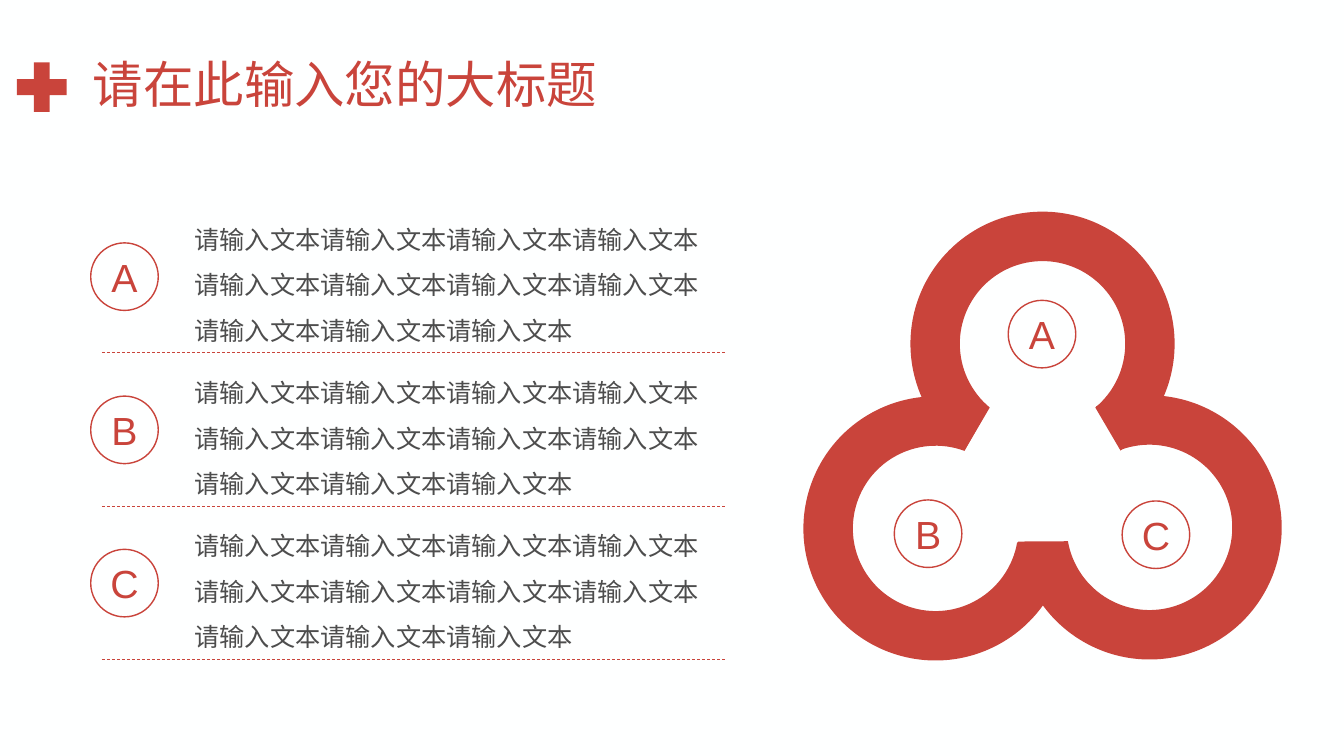
from dataclasses import dataclass
from math import cos, radians, sin, tan

from lxml.etree import SubElement
from pptx import Presentation
from pptx.dml.color import RGBColor
from pptx.enum.dml import MSO_LINE_DASH_STYLE as Dash
from pptx.enum.shapes import MSO_CONNECTOR, MSO_SHAPE
from pptx.enum.text import MSO_ANCHOR, PP_ALIGN
from pptx.oxml.ns import qn
from pptx.util import Inches, Pt


@dataclass(frozen=True)
class Theme:
    accent: RGBColor = RGBColor(0xC9, 0x44, 0x3B)
    body: RGBColor = RGBColor(0x4D, 0x4D, 0x4D)
    background: RGBColor = RGBColor(0xFE, 0xFF, 0xFF)
    latin_font: str = "Arial"
    chinese_font: str = "Noto Sans CJK SC"
    title_size: Pt = Pt(36)
    badge_size: Pt = Pt(28)
    body_size: Pt = Pt(18)


THEME = Theme()
TITLE = "请在此输入您的大标题"
BODY = "请输入文本" * 11
SLIDE_SIZE = (13.33, 7.5)
ROW_PITCH = 1.52
BADGE_SIZE = 0.67
ARM_SIZE = (2.62, 2.37)
OUTER_ARC = (1.31, [126.2, 180, 270, 360, 413.8])
INNER_ARC = (0.82, [410.3, 360, 270, 180, 129.7])
BADGES = [("A", 10, 2.98), ("B", 8.87, 4.96), ("C", 11.13, 4.97)]
ARMS = [(7.86, 4.12, 240), (10.2, 4.11, 120), (9.03, 2.1, 0)]


def write_text(shape, text, size, color, font, alignment, spacing):
    frame = shape.text_frame
    frame.word_wrap = True
    frame.vertical_anchor = MSO_ANCHOR.MIDDLE
    paragraph = frame.paragraphs[0]
    paragraph.alignment = alignment
    paragraph.line_spacing = spacing
    run = paragraph.add_run()
    run.text = text
    run.font.size = size
    run.font.color.rgb = color
    run.font.name = font
    SubElement(run.font._element, qn("a:ea")).set("typeface", font)


def fill_plain(shape, color):
    shape.shadow.inherit = False
    shape.fill.solid()
    shape.fill.fore_color.rgb = color
    shape.line.fill.background()


def add_filled_shape(slide, kind, color, left, top, width, height):
    shape = slide.shapes.add_shape(
        kind, Inches(left), Inches(top), Inches(width), Inches(height))
    fill_plain(shape, color)


def add_title(slide):
    title = slide.shapes.title
    title._element.getparent().append(title._element)
    title.left, title.top = Inches(0.82), Inches(0.4)
    title.width, title.height = Inches(11.68), Inches(0.93)
    write_text(title, TITLE, THEME.title_size, THEME.accent,
               THEME.chinese_font, PP_ALIGN.LEFT, 0.9)


def add_badge(slide, letter, left, top):
    badge = slide.shapes.add_shape(
        MSO_SHAPE.OVAL, Inches(left), Inches(top), Inches(BADGE_SIZE), Inches(BADGE_SIZE))
    badge.shadow.inherit = False
    badge.fill.background()
    badge.line.color.rgb = THEME.accent
    badge.line.width = Pt(1)
    frame = badge.text_frame
    frame.margin_left = frame.margin_right = 0
    frame.margin_top = frame.margin_bottom = 0
    write_text(badge, letter, THEME.badge_size, THEME.accent,
               THEME.latin_font, PP_ALIGN.CENTER, 1.0)


def arc_point(radius, angle, tangent=0.0):
    center = ARM_SIZE[0] / 2
    turn = radians(angle)
    return (Inches(center + radius * (cos(turn) - tangent * sin(turn))),
            Inches(center + radius * (sin(turn) + tangent * cos(turn))))


def arc_controls(radius, angles):
    for start, end in zip(angles, angles[1:]):
        reach = 4 / 3 * tan(radians(end - start) / 4)
        yield arc_point(radius, start, reach), arc_point(radius, end, -reach)


def bend_segment(segment, controls):
    segment.tag = qn("a:cubicBezTo")
    for position, (x, y) in enumerate(controls):
        point = segment.makeelement(qn("a:pt"), {"x": str(int(x)), "y": str(int(y))})
        segment.insert(position, point)


def add_arm(slide, left, top, rotation):
    outline = [arc_point(radius, angle)
               for radius, angles in (OUTER_ARC, INNER_ARC) for angle in angles]
    builder = slide.shapes.build_freeform(*outline[0])
    builder.add_line_segments(outline[1:], close=True)
    arm = builder.convert_to_shape()
    segments = list(arm._element.iter(qn("a:lnTo")))
    outer_count = len(OUTER_ARC[1]) - 1
    for segment, controls in zip(segments[:outer_count], arc_controls(*OUTER_ARC)):
        bend_segment(segment, controls)
    for segment, controls in zip(segments[outer_count + 1:], arc_controls(*INNER_ARC)):
        bend_segment(segment, controls)
    arm.left, arm.top = Inches(left), Inches(top)
    arm.width, arm.height = (Inches(length) for length in ARM_SIZE)
    arm.rotation = rotation
    fill_plain(arm, THEME.accent)


def add_body_text(slide, top):
    box = slide.shapes.add_shape(
        MSO_SHAPE.ROUNDED_RECTANGLE, Inches(1.83), Inches(top), Inches(5.39), Inches(1.4))
    box.adjustments[0] = 0
    box.shadow.inherit = False
    box.fill.background()
    box.line.fill.background()
    write_text(box, BODY, THEME.body_size, THEME.body,
               THEME.chinese_font, PP_ALIGN.LEFT, 1.5)


def add_divider(slide, top):
    divider = slide.shapes.add_connector(
        MSO_CONNECTOR.STRAIGHT, Inches(1.01), Inches(top), Inches(7.2), Inches(top))
    divider.line.color.rgb = THEME.accent
    divider.line.width = Pt(0.5)
    divider.line.dash_style = Dash.DASH
    SubElement(divider._element.spPr, qn("a:effectLst"))


def main():
    presentation = Presentation()
    presentation.slide_width, presentation.slide_height = map(Inches, SLIDE_SIZE)
    slide = presentation.slides.add_slide(presentation.slide_layouts[5])

    add_filled_shape(slide, MSO_SHAPE.RECTANGLE, THEME.background, 0, 0, *SLIDE_SIZE)
    add_filled_shape(slide, MSO_SHAPE.MATH_PLUS, THEME.accent, 0.08, 0.53, 0.67, 0.67)
    add_title(slide)
    for letter, left, top in BADGES:
        add_badge(slide, letter, left, top)
    for left, top, rotation in ARMS:
        add_arm(slide, left, top, rotation)
    for row in range(len(BADGES)):
        add_body_text(slide, 2.05 + row * ROW_PITCH)
        add_divider(slide, 3.5 + row * ROW_PITCH)
    for row, (letter, *_) in enumerate(BADGES):
        add_badge(slide, letter, 0.9, 2.41 + row * ROW_PITCH)

    presentation.save("out.pptx")


if __name__ == "__main__":
    main()
